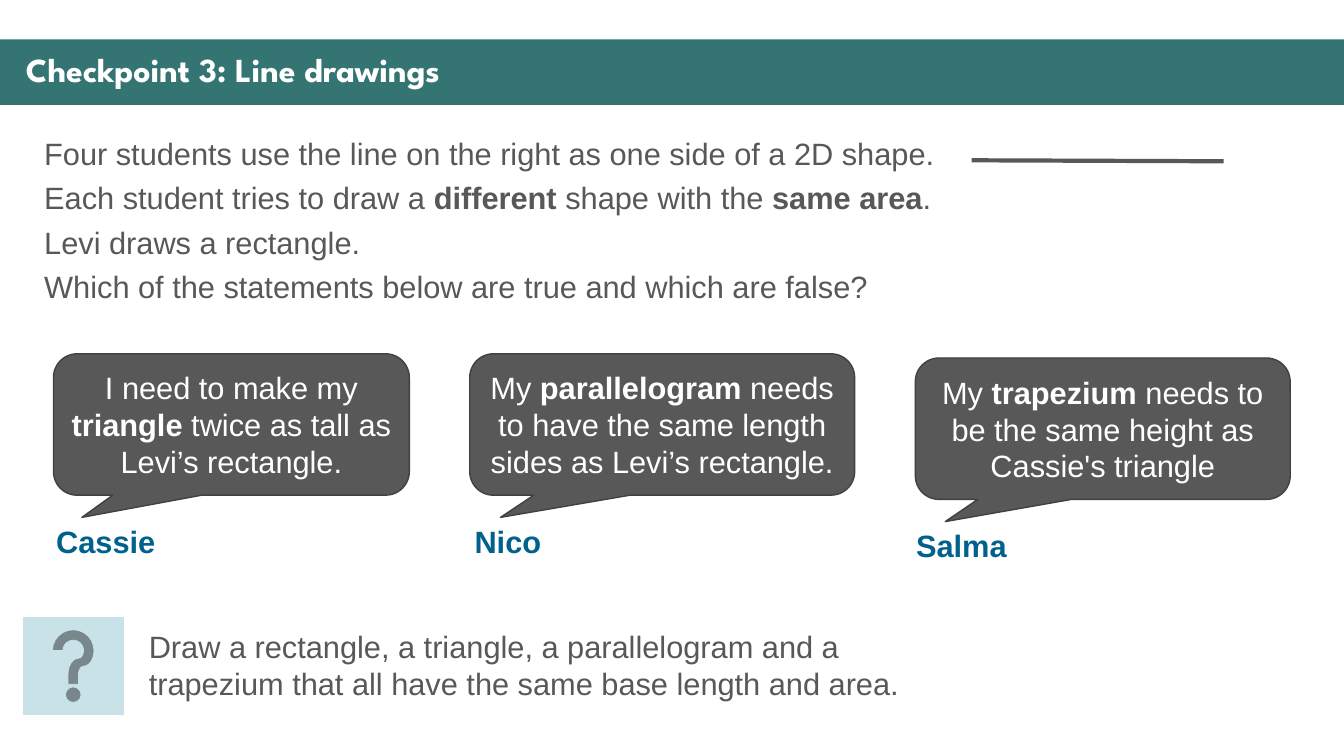
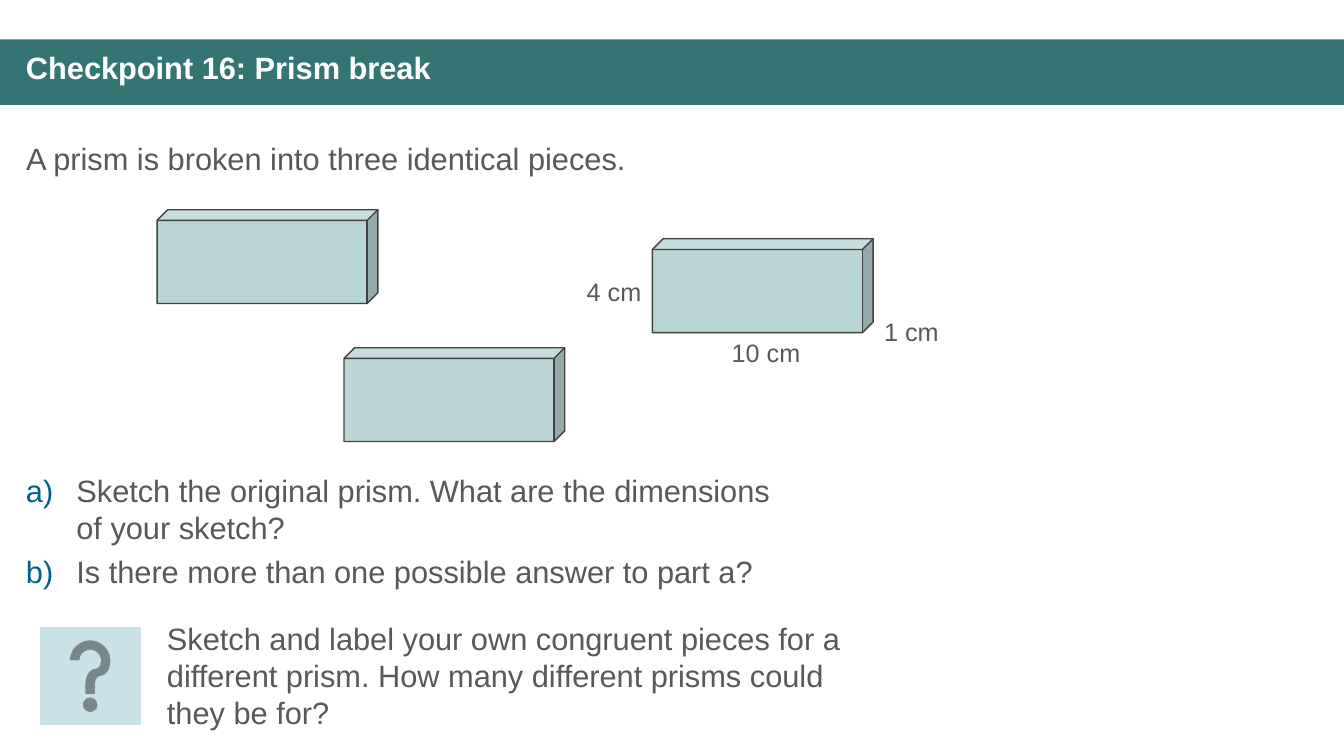
from lxml.etree import SubElement
from pptx import Presentation
from pptx.dml.color import RGBColor
from pptx.enum.shapes import MSO_CONNECTOR, MSO_SHAPE
from pptx.enum.text import MSO_ANCHOR, PP_ALIGN
from pptx.oxml.ns import qn
from pptx.util import Pt

WHITE = RGBColor(0xFF, 0xFF, 0xFF)
TEAL = RGBColor(0x34, 0x75, 0x74)
GREY = RGBColor(0x58, 0x58, 0x58)
OUTLINE = RGBColor(0x41, 0x41, 0x41)
BLUE = RGBColor(0x00, 0x62, 0x8C)
PALE_BLUE = RGBColor(0xC8, 0xE2, 0xE8)
PRISM_FILL = RGBColor(0xB9, 0xD5, 0xD5)

SLIDE_WIDTH, SLIDE_HEIGHT = 960, 540
BODY_FONT, BODY_SIZE, LABEL_SIZE = "Arial", 22, 18
PARAGRAPH_GAP = 5
LIST_INDENT = 36
LABEL_HEIGHT = 29
PRISM_WIDTH, PRISM_HEIGHT = 157.7, 67


def points(*values):
    return [Pt(value) for value in values]


def add_runs(paragraph, runs, size=BODY_SIZE, color=GREY, font=BODY_FONT):
    """Add (text, bold) runs in one style."""
    for text, bold in runs:
        run = paragraph.add_run()
        run.text = text
        run.font.name = font
        run.font.size = Pt(size)
        run.font.bold = bold
        run.font.color.rgb = color


def set_lettered(paragraph):
    """Number the paragraph a), b), ... with a blue hanging letter."""
    properties = paragraph._p.get_or_add_pPr()
    properties.set("marL", str(Pt(LIST_INDENT)))
    properties.set("indent", str(-Pt(LIST_INDENT)))
    color = SubElement(properties, qn("a:buClr"))
    SubElement(color, qn("a:srgbClr"), val=str(BLUE))
    SubElement(properties, qn("a:buFont"), typeface="+mj-lt")
    SubElement(properties, qn("a:buAutoNum"), type="alphaLcParenR")


def add_text(slide, box, paragraphs, wrap=True, lettered=False, **style):
    """Place a text box holding a list of paragraphs, each a list of runs."""
    frame = slide.shapes.add_textbox(*points(*box)).text_frame
    frame.word_wrap = wrap
    for index, runs in enumerate(paragraphs):
        paragraph = frame.add_paragraph() if index else frame.paragraphs[0]
        if lettered:
            set_lettered(paragraph)
        if index:
            paragraph.space_before = Pt(PARAGRAPH_GAP)
        add_runs(paragraph, runs, **style)
    return frame


def add_panel(slide, kind, box, fill, line=None, line_width=1):
    shape = slide.shapes.add_shape(kind, *points(*box))
    shape.shadow.inherit = False
    shape.fill.solid()
    shape.fill.fore_color.rgb = fill
    if line is None:
        shape.line.fill.background()
    else:
        shape.line.color.rgb = line
        shape.line.width = Pt(line_width)
    return shape


def add_checkpoint_slide(presentation, title, **title_style):
    """Start a slide with the title band."""
    slide = presentation.slides.add_slide(presentation.slide_layouts[6])
    add_panel(slide, MSO_SHAPE.RECTANGLE, (0, 28.2, SLIDE_WIDTH, 46.8), TEAL)
    frame = add_text(slide, (11.5, 34.5, 939, 34), [[(title, True)]],
                     color=WHITE, **title_style)
    frame.paragraphs[0].line_spacing = 0.9
    return slide


def add_challenge(slide, icon_left, icon_top, text_box, text):
    """Place the question-mark tile and the further task beside it."""
    add_panel(slide, MSO_SHAPE.ACTION_BUTTON_HELP, (icon_left, icon_top, 71.5, 69.2),
              PALE_BLUE, PALE_BLUE, 0.5)
    add_text(slide, text_box, [[(text, False)]])


def add_speaker(slide, box, name, name_left, runs):
    """Place a speech bubble with the speaker's name below it."""
    bubble = add_panel(slide, MSO_SHAPE.ROUNDED_RECTANGULAR_CALLOUT, box, GREY, OUTLINE)
    for index, value in enumerate((-0.42, 0.657, 0.167)):
        bubble.adjustments[index] = value
    frame = bubble.text_frame
    frame.word_wrap = True
    frame.vertical_anchor = MSO_ANCHOR.MIDDLE
    paragraph = frame.paragraphs[0]
    paragraph.alignment = PP_ALIGN.CENTER
    add_runs(paragraph, runs, color=WHITE)
    add_text(slide, (name_left, box[1] + 117.2, 86, 34), [[(name, True)]],
             wrap=False, color=BLUE)


def add_prism(slide, left, top):
    prism = add_panel(slide, MSO_SHAPE.CUBE, (left, top, PRISM_WIDTH, PRISM_HEIGHT),
                      PRISM_FILL, OUTLINE)
    prism.adjustments[0] = 0.114


def add_dimensions(slide, left, top):
    """Label the sides of the prism at the given corner."""
    labels = (
        ("10 cm", left + 49.6, top + PRISM_HEIGHT, 64),
        ("4 cm", left - 54, top + 23, 54),
        ("1 cm", left + PRISM_WIDTH + 0.7, top + 52, 54),
    )
    for text, label_left, label_top, width in labels:
        add_text(slide, (label_left, label_top, width, LABEL_HEIGHT),
                 [[(text, False)]], wrap=False, size=LABEL_SIZE)


def add_base_line(slide, start_x, start_y, end_x, end_y):
    line = slide.shapes.add_connector(
        MSO_CONNECTOR.STRAIGHT, *points(start_x, start_y, end_x, end_y))
    line.line.color.rgb = GREY
    line.line.width = Pt(3)
    SubElement(line._element.spPr, qn("a:effectLst"))


def build_line_drawings(presentation):
    slide = add_checkpoint_slide(presentation, "Checkpoint 3: Line drawings",
                                 font="League Spartan", size=24)
    add_base_line(slide, 694, 114.5, 874, 115.2)
    add_text(slide, (24.5, 92.9, 705, 66), [
        [("Four students use the line on the right as one side of a 2D shape.", False)],
        [("Each student tries to draw a ", False), ("different ", True),
         ("shape with the ", False), ("same area", True), (".", False)],
    ])
    add_text(slide, (24.5, 156.2, 614, 66), [
        [("Levi draws a rectangle.", False)],
        [("Which of the statements below are true and which are false?", False)],
    ])
    speakers = (
        ("Cassie", 33.1, (38.2, 252.7, 254.2, 101),
         [("I need to make my ", False), ("triangle", True),
          (" twice as tall as Levi’s rectangle.", False)]),
        ("Nico", 331.9, (335.5, 252.7, 275, 101),
         [("My ", False), ("parallelogram ", True),
          ("needs to have the same length sides as Levi’s rectangle.", False)]),
        ("Salma", 647.3, (653.8, 255.7, 267.8, 101),
         [("My ", False), ("trapezium", True),
          (" needs to be the same height as Cassie's triangle", False)]),
    )
    for name, name_left, box, runs in speakers:
        add_speaker(slide, box, name, name_left, runs)
    add_challenge(slide, 16.6, 441.2, (99.2, 445, 580, 60),
                  "Draw a rectangle, a triangle, a parallelogram and a trapezium "
                  "that all have the same base length and area.")


def build_prism_break(presentation):
    slide = add_checkpoint_slide(presentation, "Checkpoint 16: Prism break")
    add_text(slide, (11.5, 96.5, 948, 34),
             [[("A prism is broken into three identical pieces.", False)]])
    labelled_corner = (466, 170.6)
    for corner in ((112.2, 149.8), (245.7, 248.4), labelled_corner):
        add_prism(slide, *corner)
    add_dimensions(slide, *labelled_corner)
    add_text(slide, (11.5, 333.4, 568, 93), [
        [("Sketch the original prism. What are the dimensions of your sketch?", False)],
        [("Is there more than one possible answer to part a?", False)],
    ], lettered=True)
    add_challenge(slide, 28.7, 448.4, (112.2, 439.2, 513, 87),
                  "Sketch and label your own congruent pieces for a different prism. "
                  "How many different prisms could they be for?")


def main():
    presentation = Presentation()
    presentation.slide_width, presentation.slide_height = points(SLIDE_WIDTH, SLIDE_HEIGHT)
    build_line_drawings(presentation)
    build_prism_break(presentation)
    presentation.save("out.pptx")


if __name__ == "__main__":
    main()
